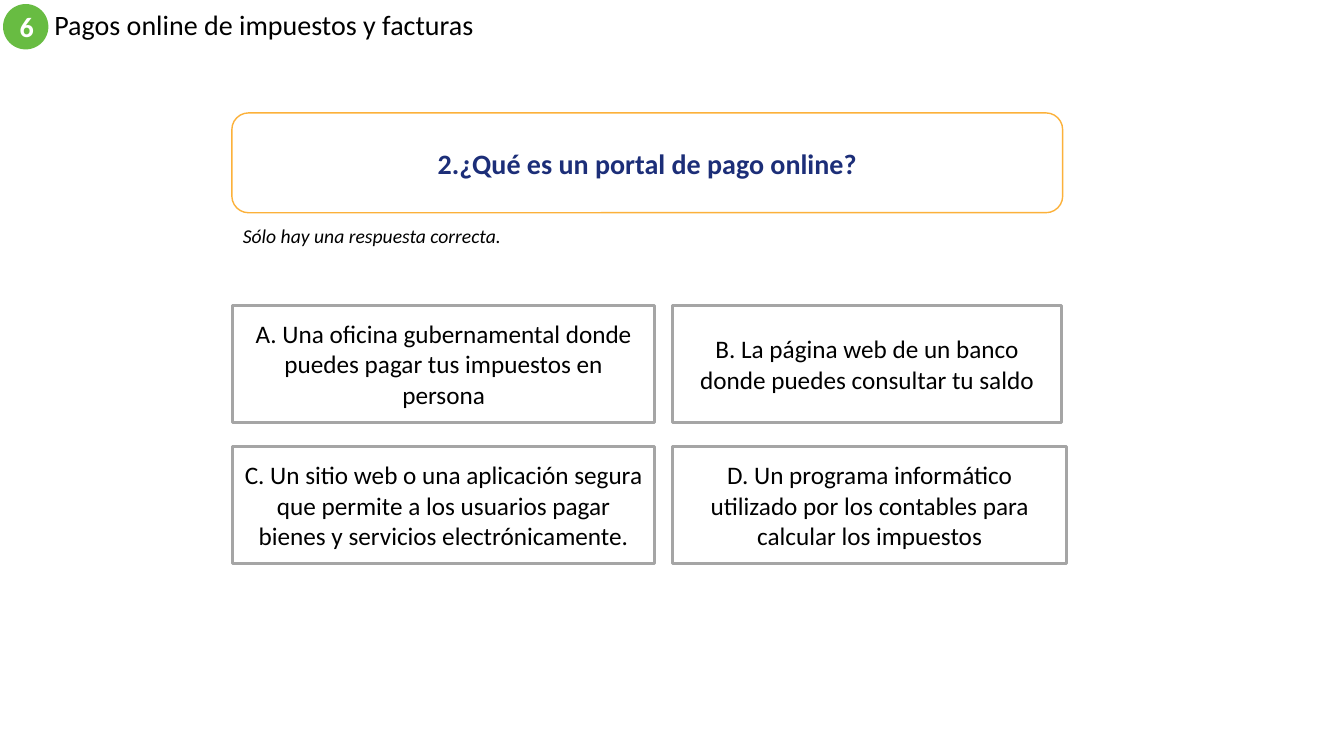
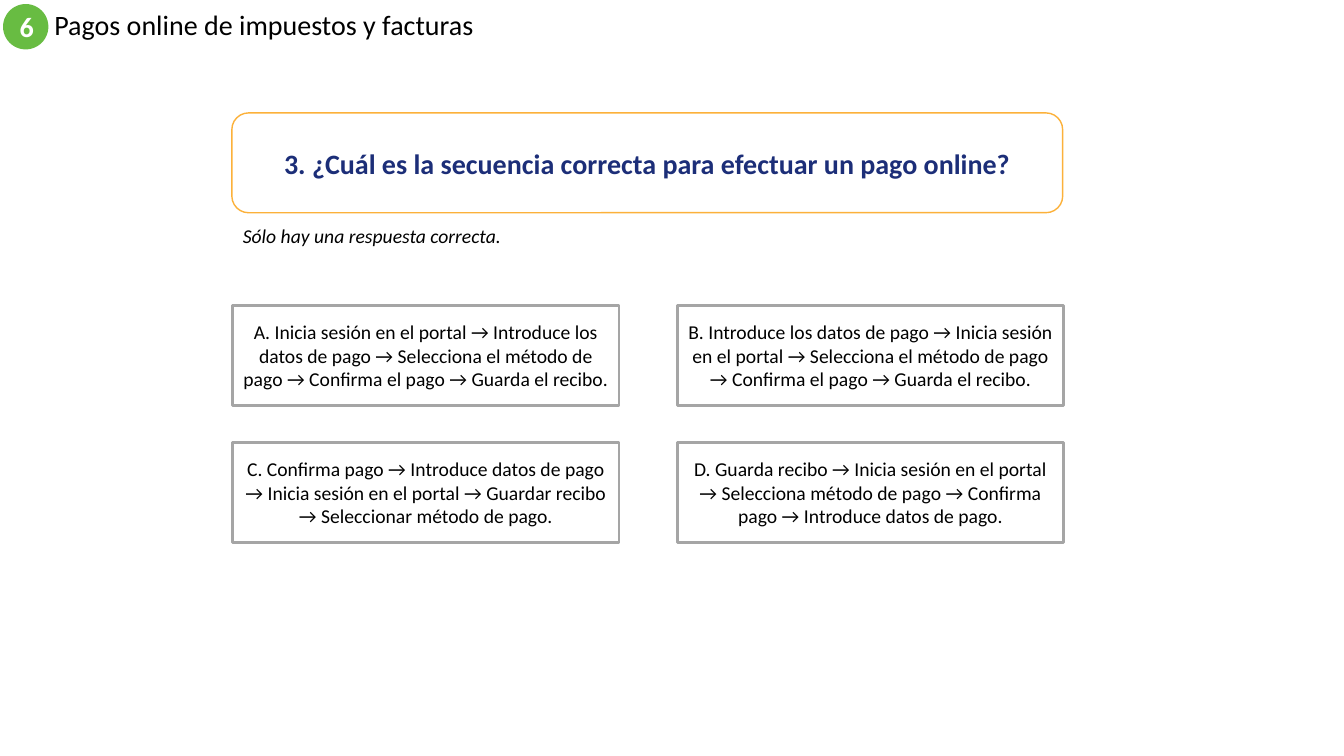
from pptx import Presentation
from pptx.dml.color import RGBColor
from pptx.enum import shapes, text
from pptx.util import Pt

PX = 9144
FONT = "Calibri"
BLACK = RGBColor(0, 0, 0)
WHITE = RGBColor(255, 255, 255)
GREEN = RGBColor(0x68, 0xBC, 0x42)
AMBER = RGBColor(0xFC, 0xB1, 0x3A)
NAVY = RGBColor(0x1C, 0x2E, 0x78)
GRAY = RGBColor(0xA5, 0xA5, 0xA5)
LEFT, TOP = 231, 303
KIND = shapes.MSO_SHAPE
MIDDLE = text.MSO_ANCHOR.MIDDLE


def scale(*box):
    return [side * PX for side in box]


def write(shape, words, size, color=BLACK, bold=False, italic=False):
    frame = shape.text_frame
    frame.word_wrap = True
    frame.text = words
    para = frame.paragraphs[0]
    font = para.font
    font.name, font.size = FONT, Pt(size)
    font.bold, font.italic = bold, italic
    font.color.rgb = color
    return frame, para


def label(slide, box, words, size, **style):
    return write(slide.shapes.add_textbox(*scale(*box)), words, size, **style)


def panel(slide, kind, box, words, size, fill=WHITE, line=None, width=1, **style):
    shape = slide.shapes.add_shape(kind, *scale(*box))
    shape.shadow.inherit = False
    shape.fill.solid()
    shape.fill.fore_color.rgb = fill
    if line is None:
        shape.line.fill.background()
    else:
        shape.line.color.rgb = line
        shape.line.width = Pt(width)
    frame, para = write(shape, words, size, **style)
    frame.vertical_anchor = MIDDLE
    para.alignment = text.PP_ALIGN.CENTER


def header(slide):
    frame, para = label(slide, (44, 4, 800, 45),
                        "Pagos online de impuestos y facturas", 20)
    frame.vertical_anchor = MIDDLE
    para.line_spacing = 0.9
    panel(slide, KIND.OVAL, (3, 4, 45, 45), "6", 20,
          fill=GREEN, color=WHITE, bold=True)


def question(slide, words):
    panel(slide, KIND.ROUNDED_RECTANGLE, (230, 112, 824, 99), words, 20,
          line=AMBER, color=NAVY, bold=True)
    frame, _ = label(slide, (LEFT, 217, 320, 34),
                     "Sólo hay una respuesta correcta.", 14, italic=True)
    frame.auto_size = text.MSO_AUTO_SIZE.SHAPE_TO_FIT_TEXT


def answers(slide, items, widths, height, across, down, size):
    for i, (words, width) in enumerate(zip(items, widths)):
        row, col = divmod(i, 2)
        box = (LEFT + col * across, TOP + row * down, width, height)
        panel(slide, KIND.RECTANGLE, box, words, size, line=GRAY, width=2)


def quiz(deck, words, items, **grid):
    slide = deck.slides.add_slide(deck.slide_layouts[6])
    header(slide)
    question(slide, words)
    answers(slide, items, **grid)


def main():
    deck = Presentation()
    deck.slide_width, deck.slide_height = scale(1333, 750)
    quiz(deck, "2.¿Qué es un portal de pago online?", [
        "A. Una oficina gubernamental donde puedes pagar tus impuestos en persona",
        "B. La página web de un banco donde puedes consultar tu saldo",
        "C. Un sitio web o una aplicación segura que permite a los usuarios "
        "pagar bienes y servicios electrónicamente.",
        "D. Un programa informático utilizado por los contables para "
        "calcular los impuestos",
    ], widths=(418, 386, 418, 391), height=116, across=436, down=140, size=18)
    quiz(deck, "3. ¿Cuál es la secuencia correcta para efectuar un pago online?", [
        "A. Inicia sesión en el portal → Introduce los datos de pago → "
        "Selecciona el método de pago → Confirma el pago → Guarda el recibo.",
        "B. Introduce los datos de pago → Inicia sesión en el portal → "
        "Selecciona el método de pago → Confirma el pago → Guarda el recibo.",
        "C. Confirma pago → Introduce datos de pago → Inicia sesión en el "
        "portal → Guardar recibo → Seleccionar método de pago.",
        "D. Guarda recibo → Inicia sesión en el portal → Selecciona método "
        "de pago → Confirma pago → Introduce datos de pago.",
    ], widths=(383,) * 4, height=99, across=441, down=136, size=14)
    deck.save("out.pptx")


if __name__ == "__main__":
    main()
